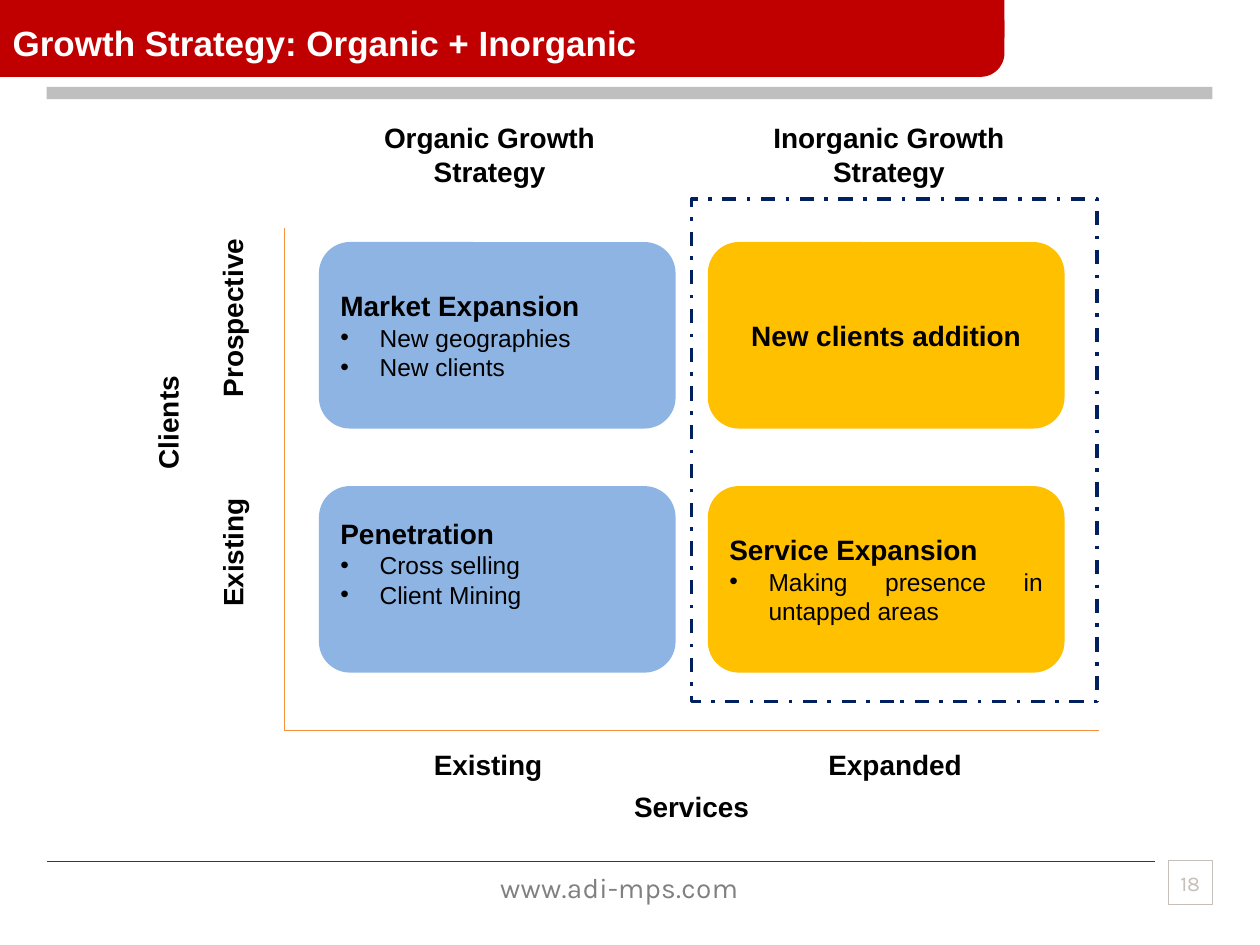
from lxml.etree import SubElement
from pptx import Presentation
from pptx.dml.color import RGBColor
from pptx.enum.dml import MSO_LINE
from pptx.enum.shapes import MSO_CONNECTOR, MSO_SHAPE
from pptx.enum.text import MSO_ANCHOR, MSO_AUTO_SIZE, PP_ALIGN
from pptx.oxml.ns import qn
from pptx.util import Cm, Pt

COLORS = {
    "red": "C00000", "bar": "BFBFBF", "axis": "F69240", "organic": "8EB4E3",
    "inorganic": "FFC000", "navy": "002060", "black": "000000",
    "white": "FFFFFF", "address": "808080", "page": "C6BFB9",
}
COLUMNS = (6.43, 14.27)
ROWS = (4.88, 9.8)
CARD_WIDTH, CARD_HEIGHT = 7.19, 3.76
LABEL_HEIGHT = 0.94
INDENT = Cm(0.79)


def rgb(color):
    return RGBColor.from_string(COLORS[color])


def style(paragraph, size, color="black", bold=False, font="Arial", align=PP_ALIGN.CENTER):
    paragraph.alignment = align
    paragraph.font.name = font
    paragraph.font.size = Pt(size)
    paragraph.font.bold = bold
    paragraph.font.color.rgb = rgb(color)


def add_block(slide, kind, left, top, width, height, fill=None, line=None, weight=0.75):
    block = slide.shapes.add_shape(kind, Cm(left), Cm(top), Cm(width), Cm(height))
    block.shadow.inherit = False
    if fill:
        block.fill.solid()
        block.fill.fore_color.rgb = rgb(fill)
    else:
        block.fill.background()
    if line:
        block.line.color.rgb = rgb(line)
        block.line.width = Pt(weight)
    else:
        block.line.fill.background()
    return block


def add_rule(slide, x1, y1, x2, y2, color):
    rule = slide.shapes.add_connector(
        MSO_CONNECTOR.STRAIGHT, Cm(x1), Cm(y1), Cm(x2), Cm(y2))
    rule.line.color.rgb = rgb(color)
    rule.line.width = Pt(0.75)
    SubElement(rule._element.spPr, qn("a:effectLst"))


def add_label(slide, text, left, top, width, height=LABEL_HEIGHT, rotation=0, wrap=False):
    label = slide.shapes.add_textbox(Cm(left), Cm(top), Cm(width), Cm(height))
    label.rotation = rotation
    label.text_frame.word_wrap = wrap
    label.text_frame.text = text
    style(label.text_frame.paragraphs[0], 16, bold=True)
    return label


def add_bullet(paragraph):
    properties = paragraph._p.get_or_add_pPr()
    properties.set("marL", str(INDENT))
    properties.set("indent", str(-INDENT))
    SubElement(properties, qn("a:buFont"), typeface="Arial")
    SubElement(properties, qn("a:buChar"), char="•")


def add_card(slide, column, row, fill, heading, points=(), bottom_inset=0.13):
    card = add_block(slide, MSO_SHAPE.ROUNDED_RECTANGLE, COLUMNS[column], ROWS[row],
                     CARD_WIDTH, CARD_HEIGHT, fill)
    frame = card.text_frame
    frame.word_wrap = True
    frame.vertical_anchor = MSO_ANCHOR.MIDDLE
    frame.margin_bottom = Cm(bottom_inset)
    align = PP_ALIGN.JUSTIFY if points else PP_ALIGN.CENTER
    frame.text = heading
    style(frame.paragraphs[0], 16, bold=True, align=align)
    for point in points:
        paragraph = frame.add_paragraph()
        paragraph.text = point
        add_bullet(paragraph)
        style(paragraph, 14, align=align)


def add_header(slide, text):
    add_block(slide, MSO_SHAPE.RECTANGLE, 0.94, 1.75, 23.5, 0.25, "bar")
    add_block(slide, MSO_SHAPE.RECTANGLE, 0, 0, 5.87, 1.55, "red")
    add_block(slide, MSO_SHAPE.RECTANGLE, 14.38, 0, 5.87, 0.76, "red")
    banner = add_block(slide, MSO_SHAPE.ROUNDED_RECTANGLE, 0, 0, 20.25, 1.55, "red")
    banner.adjustments[0] = 0.31

    title = slide.shapes.title
    title.left, title.top, title.width, title.height = Cm(0), Cm(0), Cm(18.31), Cm(1.7)
    title.text_frame.text = text
    title.text_frame.auto_size = MSO_AUTO_SIZE.NONE
    title.text_frame.vertical_anchor = MSO_ANCHOR.MIDDLE
    style(title.text_frame.paragraphs[0], 20, "white", True, align=PP_ALIGN.LEFT)
    banner._element.addnext(title._element)  # the title lies above the banner


def add_footer(slide, address, page):
    add_rule(slide, 0.94, 17.37, 23.29, 17.37, "red")
    address_label = add_label(slide, address, 1.55, 17.42, 21.87, wrap=True)
    paragraph = address_label.text_frame.paragraphs[0]
    style(paragraph, 16, "address", font="Karla")
    paragraph.runs[0]._r.get_or_add_rPr().set("spc", "20")

    page_box = add_block(slide, MSO_SHAPE.RECTANGLE, 23.55, 17.35, 0.89, 0.89, line="page")
    frame = page_box.text_frame
    frame.margin_left = frame.margin_right = frame.margin_top = frame.margin_bottom = 0
    frame.vertical_anchor = MSO_ANCHOR.MIDDLE
    frame.text = page
    style(frame.paragraphs[0], 12, "page", font="Karla")


def add_matrix(slide):
    add_rule(slide, 5.74, 4.6, 5.74, 14.73, "axis")
    add_rule(slide, 5.74, 14.73, 22.15, 14.73, "axis")

    add_label(slide, "Existing", 8.48, 14.94, 2.72)
    add_label(slide, "Expanded", 16.43, 14.94, 3.23)
    add_label(slide, "Services", 12.52, 15.8, 2.84)
    add_label(slide, "Prospective", 2.82, 5.94, 3.73, rotation=270)
    add_label(slide, "Existing", 3.33, 10.67, 2.72, rotation=270)
    add_label(slide, "Clients", 2.18, 8.05, 2.41, rotation=270)

    add_card(slide, 0, 0, "organic", "Market Expansion", ("New geographies", "New clients"))
    add_card(slide, 1, 0, "inorganic", "New clients addition")
    add_card(slide, 0, 1, "organic", "Penetration", ("Cross selling", "Client Mining"),
             bottom_inset=0.79)
    add_card(slide, 1, 1, "inorganic", "Service Expansion",
             ("Making presence in untapped areas",))

    inorganic_frame = add_block(slide, MSO_SHAPE.RECTANGLE, 13.94, 4.01, 8.18, 10.13,
                                line="navy", weight=2)
    inorganic_frame.line.dash_style = MSO_LINE.DASH_DOT

    add_label(slide, "Organic Growth Strategy", 6.35, 2.31, 7.04, 1.63, wrap=True)
    add_label(slide, "Inorganic Growth Strategy", 14.4, 2.31, 7.04, 1.63, wrap=True)


def main():
    deck = Presentation()
    deck.slide_width, deck.slide_height = Cm(25.4), Cm(19.05)
    slide = deck.slides.add_slide(deck.slide_layouts[5])
    add_header(slide, "Growth Strategy: Organic + Inorganic")
    add_footer(slide, "www.adi-mps.com", "18")
    add_matrix(slide)
    deck.save("out.pptx")


if __name__ == "__main__":
    main()
